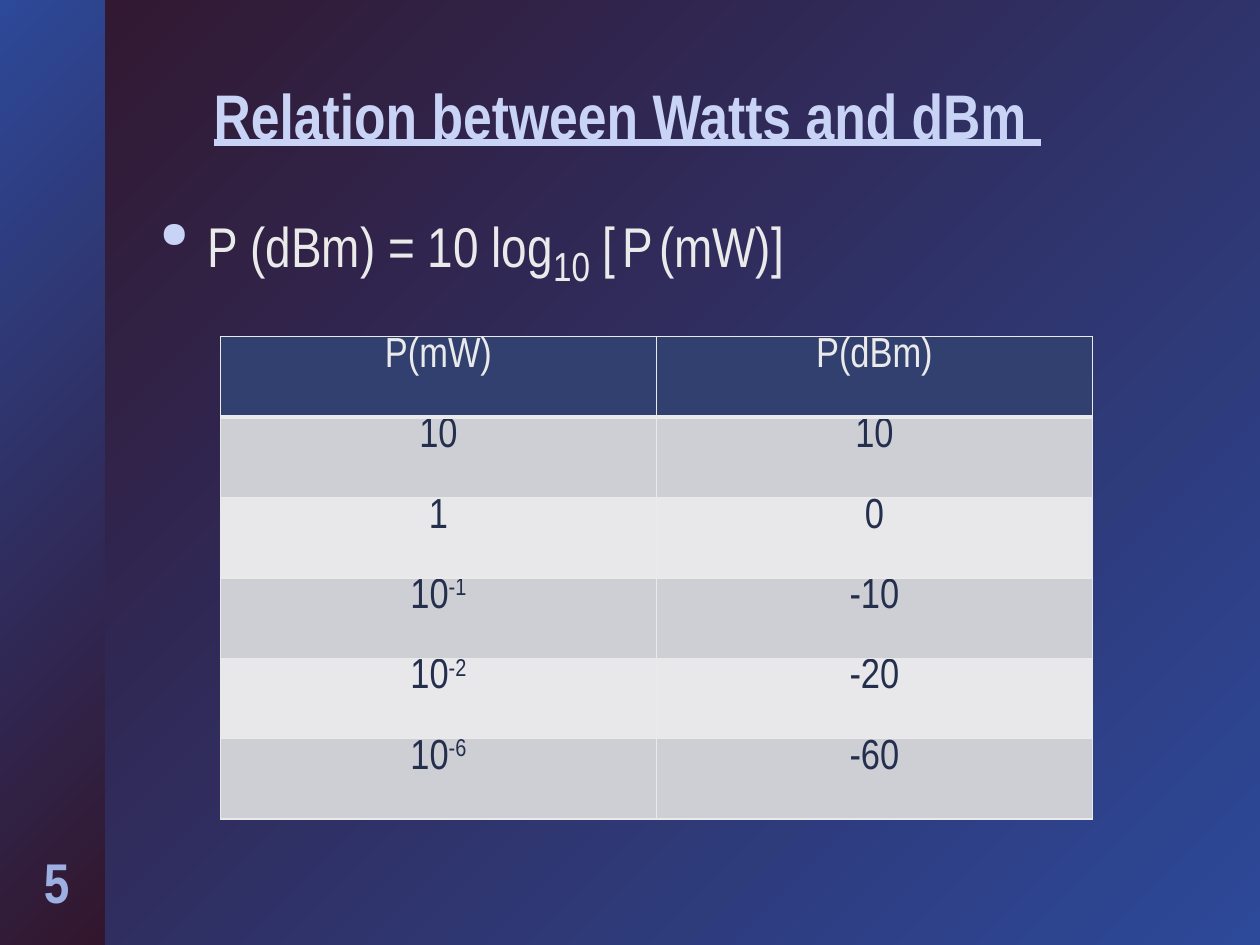
"""Build the slide on the relation between watts and dBm."""
import pptx
import pptx.dml.color
import pptx.enum.shapes
import pptx.enum.text
import pptx.oxml
import pptx.oxml.ns
import pptx.util

RGB = pptx.dml.color.RGBColor
DARK, BLUE = RGB(0x32, 0x16, 0x2D), RGB(0x2D, 0x49, 0x99)
TITLE, NUMBER = RGB(0xC8, 0xD3, 0xF6), RGB(0x9E, 0xB0, 0xE2)
LIGHT, INK = RGB(0xEA, 0xEA, 0xEA), RGB(0x24, 0x2F, 0x4E)
HEADER = RGB(0x31, 0x40, 0x6F)
BANDS = RGB(0xCE, 0xCF, 0xD5), RGB(0xE8, 0xE8, 0xEB)
FONT = "Arial Narrow"
WIDTH, HEIGHT = 10, 7.5
CENTER = pptx.enum.text.PP_ALIGN.CENTER
ROWS = [
    (["P(mW)"], ["P(dBm)"]),
    (["10"], ["10"]),
    (["1"], ["0"]),
    (["10", "-1"], ["-10"]),
    (["10", "-2"], ["-20"]),
    (["10", "-6"], ["-60"]),
]


def xml(tag, body="", attrs=""):
    ns = pptx.oxml.ns.nsdecls("a")
    return pptx.oxml.parse_xml(f"<a:{tag} {ns} {attrs}>{body}</a:{tag}>")


def solid(color):
    return f'<a:solidFill><a:srgbClr val="{color}"/></a:solidFill>'


def box(x, y, w, h):
    """Turn shares of the slide's size into lengths."""
    shares = (x, WIDTH), (y, HEIGHT), (w, WIDTH), (h, HEIGHT)
    return [pptx.util.Inches(share * full) for share, full in shares]


def set_gradient(fill, start, end):
    fill.gradient()
    fill.gradient_angle = 315
    for stop, color in zip(fill.gradient_stops, (start, end)):
        stop.color.rgb = color


def add_run(p, text, size=24, color=LIGHT, bold=False, underline=False,
            baseline=0, shadow=False):
    r = p.add_run()
    r.text = text
    r.font.name, r.font.size = FONT, pptx.util.Pt(size)
    r.font.bold, r.font.underline = bold, underline
    r.font.color.rgb = color
    rPr = r._r.get_or_add_rPr()
    if baseline:
        rPr.set("baseline", str(baseline * 1000))
    if shadow:
        effect = ('<a:outerShdw dist="38100" dir="2700000">'
                  '<a:srgbClr val="003322"/></a:outerShdw>')
        rPr.find(pptx.oxml.ns.qn("a:solidFill")).addnext(xml("effectLst", effect))


def add_paragraph_box(s, bounds, align=None, spacing=None):
    tf = s.shapes.add_textbox(*bounds).text_frame
    tf.word_wrap = True
    p = tf.paragraphs[0]
    p.alignment, p.line_spacing = align, spacing
    return p


def add_bullet(p, indent):
    pPr = p._p.get_or_add_pPr()
    pPr.set("marL", str(indent))
    pPr.set("indent", str(-indent))
    pPr.append(xml("buClr", f'<a:srgbClr val="{TITLE}"/>'))
    pPr.append(xml("buSzPct", attrs='val="65000"'))
    pPr.append(xml("buChar", attrs='char="●"'))


def add_band(s, bounds):
    sp = s.shapes.add_shape(pptx.enum.shapes.MSO_SHAPE.RECTANGLE, *bounds)
    sp.shadow.inherit = False
    sp.line.fill.background()
    set_gradient(sp.fill, BLUE, DARK)


def format_cell(cell, row, parts):
    cell.margin_top = cell.margin_bottom = 0
    tcPr = cell._tc.get_or_add_tcPr()
    thick = {"T": row == 1, "B": row == 0}
    for side in "LRTB":
        width = pptx.util.Pt(3 if thick.get(side) else 1)
        tcPr.append(xml(f"ln{side}", solid(LIGHT), f'w="{width}"'))
    cell.fill.solid()
    cell.fill.fore_color.rgb = BANDS[(row - 1) % 2] if row else HEADER
    p = cell.text_frame.paragraphs[0]
    p.alignment = CENTER
    for text, baseline in zip(parts, (0, 30)):
        add_run(p, text, color=INK if row else LIGHT, baseline=baseline)


def add_power_table(s, bounds):
    table = s.shapes.add_table(len(ROWS), len(ROWS[0]), *bounds).table
    for i, row in enumerate(ROWS):
        for j, parts in enumerate(row):
            format_cell(table.cell(i, j), i, parts)


def main():
    prs = pptx.Presentation()
    prs.slide_width = pptx.util.Inches(WIDTH)
    prs.slide_height = pptx.util.Inches(HEIGHT)
    s = prs.slides.add_slide(prs.slide_layouts[6])
    set_gradient(s.background.fill, DARK, BLUE)
    add_band(s, box(0, 0, 1 / 12, 1))

    p = add_paragraph_box(s, box(0.01, 0.89, 0.07, 0.08), CENTER)
    add_run(p, "5", size=32, color=NUMBER, bold=True)

    p = add_paragraph_box(s, box(0.113, 0.083, 0.77, 0.163), CENTER, 0.9)
    add_run(p, "Relation between Watts and dBm ", size=36, color=TITLE,
            bold=True, underline=True, shadow=True)

    p = add_paragraph_box(s, box(0.117, 0.21, 0.775, 0.247), spacing=0.85)
    add_bullet(p, pptx.util.Inches(0.38))
    formula = [("P (dBm) = 10 log", 32, 0), ("10", 40, -20), (" [", 32, 0),
               (" ", 16, 0), ("P", 32, 0), (" ", 16, 0), ("(mW)]", 32, 0)]
    for text, size, baseline in formula:
        add_run(p, text, size=size, baseline=baseline, shadow=True)

    add_power_table(s, box(0.175, 0.356, 0.692, 0.511))
    prs.save("out.pptx")


if __name__ == "__main__":
    main()
